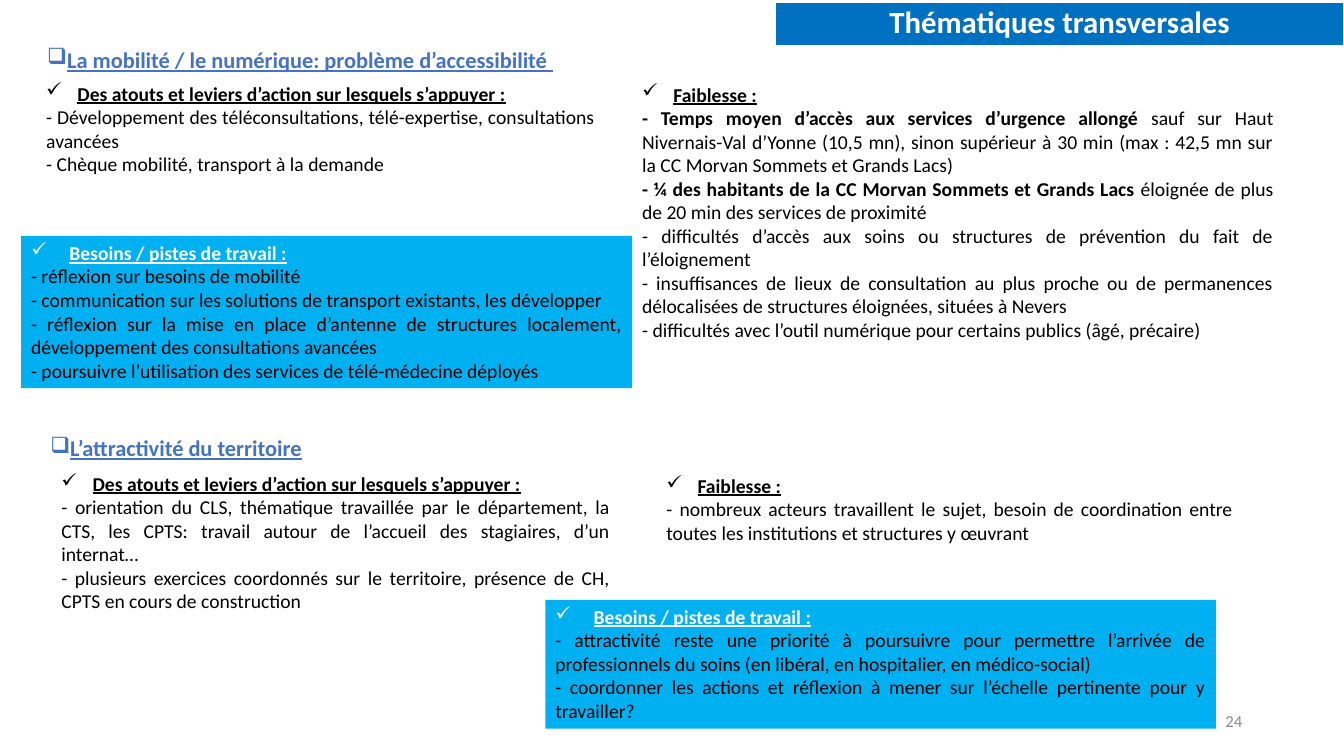
from dataclasses import dataclass

from lxml import etree
from pptx import Presentation
from pptx import util as u
from pptx.dml.color import RGBColor
from pptx.enum import shapes, text
from pptx.oxml.ns import qn

PX = 9144
ALIGN = text.PP_ALIGN


@dataclass(frozen=True)
class Theme:
    """Colours, font and type sizes of the slide."""
    font: str = "Calibri"
    ink: str = "000000"
    white: str = "FFFFFF"
    banner: str = "0070C0"
    needs: str = "00B0F0"
    heading: str = "4472C4"
    muted: str = "8C8C8C"
    banner_size: int = 22
    heading_size: int = 16
    body_size: int = 14
    number_size: int = 12


@dataclass(frozen=True)
class Box:
    """A rectangle in px."""
    left: int
    top: int
    width: int
    height: int

    def inside(self, left, top, width, height):
        """Return a box placed relative to this one."""
        return Box(self.left + left, self.top + top, width, height)

    def emu(self):
        """Return left, top, width and height in EMU."""
        return [u.Emu(side * PX) for side in (self.left, self.top, self.width, self.height)]


THEME = Theme()

MOBILITY = {
    "heading": "La mobilité / le numérique: problème d’accessibilité ",
    "strengths": [
        ["- Développement des téléconsultations, télé-expertise, consultations avancées"],
        ["- Chèque mobilité, transport à la demande"],
    ],
    "weaknesses": [
        ["- Temps moyen d’accès aux services d’urgence allongé",
         " sauf sur Haut Nivernais-Val d’Yonne (10,5 mn), sinon supérieur à 30 min "
         "(max : 42,5 mn sur la CC Morvan Sommets et Grands Lacs)"],
        ["- ¼ des habitants de la CC Morvan Sommets et Grands Lacs ",
         "éloignée de plus de 20 min des services de proximité"],
        ["- difficultés d’accès aux soins ou structures de prévention du fait de l’éloignement"],
        ["- insuffisances de lieux de consultation au plus proche ou de permanences "
         "délocalisées de structures éloignées, situées à Nevers"],
        ["- difficultés avec l’outil numérique pour certains publics (âgé, précaire)"],
    ],
    "needs": [
        ["- réflexion sur besoins de mobilité"],
        ["- communication sur les solutions de transport existants, les développer"],
        ["- réflexion sur la mise en place d’antenne de structures localement, "
         "développement des consultations avancées"],
        ["- poursuivre l’utilisation des services de télé-médecine déployés"],
    ],
}
MOBILITY_PLACES = {
    "heading": (16, 0, 535, 37),
    "strengths": (15, 35, 564, 128),
    "weaknesses": (606, 36, 646, 269),
    "needs": (0, 193, 606, 151),
}
ATTRACTIVENESS = {
    "heading": "L’attractivité du territoire",
    "strengths": [
        ["- orientation du CLS, thématique travaillée par le département, la CTS, les CPTS: "
         "travail autour de l’accueil des stagiaires, d’un internat…"],
        ["- plusieurs exercices coordonnés sur le territoire, présence de CH, "
         "CPTS en cours de construction"],
    ],
    "weaknesses": [
        ["- nombreux acteurs travaillent le sujet, besoin de coordination entre "
         "toutes les institutions et structures y œuvrant"],
    ],
    "needs": [
        ["- attractivité reste une priorité à poursuivre pour permettre l’arrivée de "
         "professionnels du soins (en libéral, en hospitalier, en médico-social)"],
        ["- coordonner les actions et réflexion à mener sur l’échelle pertinente "
         "pour y travailler?"],
    ],
}
ATTRACTIVENESS_PLACES = {
    "heading": (0, 0, 361, 37),
    "strengths": (11, 37, 564, 151),
    "weaknesses": (611, 39, 582, 81),
    "needs": (501, 169, 665, 128),
}


def add_span(para, words, size, colour, bold=False, underline=False):
    """Append one formatted run to a paragraph."""
    span = para.add_run()
    span.text = words
    font = span.font
    font.name, font.size = THEME.font, u.Pt(size)
    font.bold, font.underline = bold, underline
    font.color.rgb = RGBColor.from_string(colour)


def add_bullet(para, mark, indent):
    """Give a paragraph a bullet mark with a hanging indent in px."""
    properties = para._p.get_or_add_pPr()
    properties.set("marL", str(indent * PX))
    properties.set("indent", str(-indent * PX))
    etree.SubElement(properties, qn("a:buChar")).set("char", mark)


def add_text_box(page, box):
    """Add a wrapping text box and return its text frame."""
    frame = page.shapes.add_textbox(*box.emu()).text_frame
    frame.word_wrap = True
    return frame


def add_panel(page, box, fill):
    """Add a filled rectangle without outline and return it."""
    panel = page.shapes.add_shape(shapes.MSO_SHAPE.RECTANGLE, *box.emu())
    panel.shadow.inherit = False
    panel.fill.solid()
    panel.fill.fore_color.rgb = RGBColor.from_string(fill)
    panel.line.fill.background()
    panel.text_frame.word_wrap = True
    return panel


def write_list(frame, title, items, colour, indent):
    """Write a ticked title and its justified items; the first of two spans is bold."""
    frame.vertical_anchor = text.MSO_ANCHOR.TOP
    frame.auto_size = text.MSO_AUTO_SIZE.SHAPE_TO_FIT_TEXT
    para = frame.paragraphs[0]
    para.alignment = ALIGN.JUSTIFY
    add_bullet(para, "✓", indent)
    add_span(para, title, THEME.body_size, colour, bold=True, underline=True)
    for item in items:
        para = frame.add_paragraph()
        para.alignment = ALIGN.JUSTIFY
        for position, words in enumerate(item):
            lead = len(item) > 1 and position == 0
            add_span(para, words, THEME.body_size, THEME.ink, bold=lead)


def add_banner(page, box):
    """Add the slide title on its blue band."""
    banner = add_panel(page, box, THEME.banner)
    banner.line.color.rgb = RGBColor.from_string(THEME.white)
    banner.line.width = u.Pt(1)
    frame = banner.text_frame
    frame.vertical_anchor = text.MSO_ANCHOR.MIDDLE
    frame.margin_top = frame.margin_bottom = u.Emu(10 * PX)
    para = frame.paragraphs[0]
    para.alignment = ALIGN.CENTER
    para.line_spacing = 0.9
    add_span(para, "Thématiques transversales", THEME.banner_size, THEME.white, bold=True)


def add_topic(page, box, topic, places):
    """Add a topic: heading, strengths, weaknesses and needs panel."""
    spots = {name: box.inside(*place) for name, place in places.items()}
    heading = add_text_box(page, spots["heading"])
    heading.auto_size = text.MSO_AUTO_SIZE.SHAPE_TO_FIT_TEXT
    para = heading.paragraphs[0]
    add_bullet(para, "❑", 19)
    add_span(para, topic["heading"], THEME.heading_size, THEME.heading, bold=True, underline=True)
    needs = add_panel(page, spots["needs"], THEME.needs).text_frame
    write_list(needs, "Besoins / pistes de travail :", topic["needs"], THEME.white, 38)
    titles = {"strengths": "Des atouts et leviers d’action sur lesquels s’appuyer :",
              "weaknesses": "Faiblesse :"}
    for name, title in titles.items():
        write_list(add_text_box(page, spots[name]), title, topic[name], THEME.ink, 31)


def add_page_number(page, box):
    """Add the page number, aligned right."""
    frame = add_text_box(page, box)
    frame.vertical_anchor = text.MSO_ANCHOR.MIDDLE
    para = frame.paragraphs[0]
    para.alignment = ALIGN.RIGHT
    add_span(para, "24", THEME.number_size, THEME.muted)


def main():
    """Build the deck and save it."""
    deck = Presentation()
    deck.slide_width, deck.slide_height = u.Emu(1333 * PX), u.Emu(750 * PX)
    page = deck.slides.add_slide(deck.slide_layouts[6])
    add_page_number(page, Box(942, 695, 300, 40))
    add_banner(page, Box(769, 2, 564, 43))
    add_topic(page, Box(21, 41, 1252, 346), MOBILITY, MOBILITY_PLACES)
    add_topic(page, Box(40, 426, 1193, 297), ATTRACTIVENESS, ATTRACTIVENESS_PLACES)
    deck.save("out.pptx")


if __name__ == "__main__":
    main()
